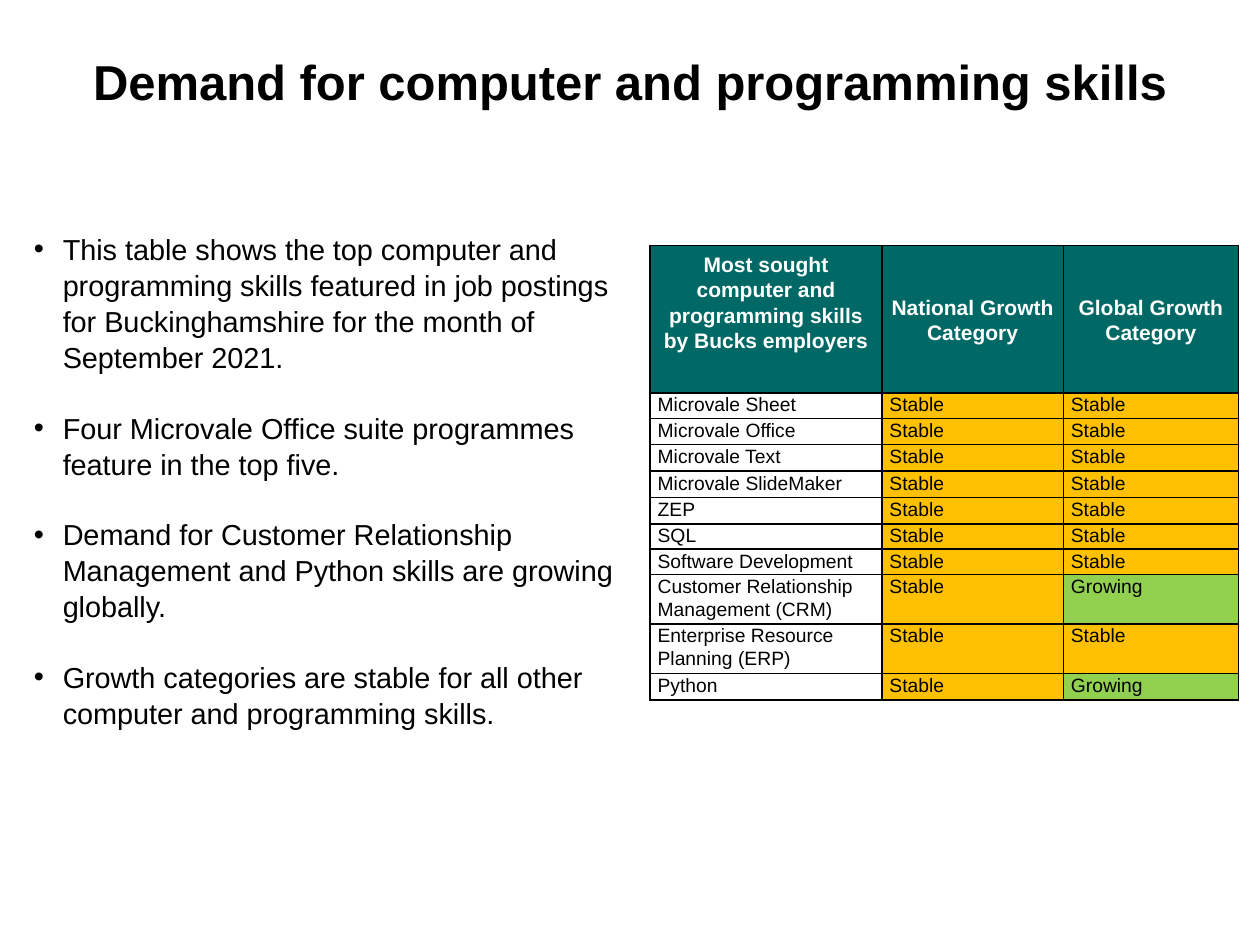
from typing import NamedTuple

from lxml.etree import SubElement
from pptx import Presentation
from pptx.dml.color import RGBColor
from pptx.enum.text import MSO_ANCHOR as Anchor, PP_ALIGN as Align
from pptx.oxml.ns import qn
from pptx.util import Inches, Pt

FONT = "Arial"
BLACK, WHITE, TEAL = "000000", "FFFFFF", "006965"
GROWTH_FILLS = {"Stable": "FFC000", "Growing": "92D050"}


class Skill(NamedTuple):
    name: str
    national: str = "Stable"
    global_: str = "Stable"
    height: float = 0.21


TITLE = "Demand for computer and programming skills"
POINTS = [
    "This table shows the top computer and programming skills featured in job "
    "postings for Buckinghamshire for the month of September 2021.",
    "Four Microvale Office suite programmes feature in the top five.",
    "Demand for Customer Relationship Management and Python skills are growing globally.",
    "Growth categories are stable for all other computer and programming skills.",
]
HEADERS = [
    "Most sought computer and programming skills by Bucks employers",
    "National Growth Category",
    "Global Growth Category",
]
SKILLS = [
    Skill("Microvale Sheet", height=0.2),
    Skill("Microvale Office"),
    Skill("Microvale Text"),
    Skill("Microvale SlideMaker"),
    Skill("ZEP"),
    Skill("SQL", height=0.2),
    Skill("Software Development", height=0.2),
    Skill("Customer Relationship Management (CRM)", global_="Growing", height=0.39),
    Skill("Enterprise Resource Planning (ERP)", height=0.39),
    Skill("Python", global_="Growing"),
]
COLUMN_WIDTHS = [1.84, 1.44, 1.39]
HEADER_HEIGHT = 1.17


def color(hex_code: str) -> RGBColor:
    return RGBColor.from_string(hex_code)


def set_font(paragraph, size: float, hex_code: str = BLACK, bold: bool = False) -> None:
    font = paragraph.font
    font.name, font.size, font.bold = FONT, Pt(size), bold
    font.color.rgb = color(hex_code)


def add_text_frame(slide, left: float, top: float, width: float, height: float):
    box = slide.shapes.add_textbox(Inches(left), Inches(top), Inches(width), Inches(height))
    box.text_frame.word_wrap = True
    return box.text_frame


def add_bullet(paragraph) -> None:
    properties = paragraph._p.get_or_add_pPr()
    properties.set("marL", str(Inches(0.23)))
    properties.set("indent", str(-Inches(0.23)))
    SubElement(properties, qn("a:buFont"), typeface=FONT)
    SubElement(properties, qn("a:buChar"), char="•")


def add_borders(cell) -> None:
    properties = cell._tc.get_or_add_tcPr()
    for position, side in enumerate(("lnL", "lnR", "lnT", "lnB")):
        line = SubElement(properties, qn(f"a:{side}"), w=str(Pt(1)))
        fill = SubElement(line, qn("a:solidFill"))
        SubElement(fill, qn("a:srgbClr"), val=BLACK)
        properties.insert(position, line)


def fill_cell(cell, text: str, fill: str | None, header: bool = False) -> None:
    cell.margin_left = cell.margin_right = Inches(0.06)
    cell.margin_top = cell.margin_bottom = 0
    cell.vertical_anchor = Anchor.MIDDLE if header else Anchor.TOP
    if fill:
        cell.fill.solid()
        cell.fill.fore_color.rgb = color(fill)
    else:
        cell.fill.background()
    add_borders(cell)
    paragraph = cell.text_frame.paragraphs[0]
    paragraph.text = text
    paragraph.line_spacing = 1.07
    paragraph.space_after = Pt(8)
    if header:
        paragraph.alignment = Align.CENTER
        set_font(paragraph, 12, WHITE, bold=True)
    else:
        set_font(paragraph, 11)


def add_title(slide) -> None:
    frame = add_text_frame(slide, 0.5, 0.02, 9, 1.25)
    frame.vertical_anchor = Anchor.MIDDLE
    paragraph = frame.paragraphs[0]
    paragraph.text = TITLE
    paragraph.alignment = Align.CENTER
    set_font(paragraph, 28, bold=True)


def add_points(slide) -> None:
    frame = add_text_frame(slide, 0.17, 1.78, 4.83, 4.27)
    for index, point in enumerate(POINTS):
        paragraph = frame.add_paragraph() if index else frame.paragraphs[0]
        paragraph.text = point
        paragraph.line_spacing = 1.04
        if index:
            paragraph.space_before = Pt(19.8)
        add_bullet(paragraph)
        set_font(paragraph, 16.5)


def add_skills_table(slide) -> None:
    heights = [HEADER_HEIGHT] + [skill.height for skill in SKILLS]
    table = slide.shapes.add_table(
        len(heights), len(HEADERS), Inches(5.16), Inches(1.95),
        Inches(sum(COLUMN_WIDTHS)), Inches(sum(heights)),
    ).table
    for column, width in zip(table.columns, COLUMN_WIDTHS):
        column.width = Inches(width)
    for row, height in zip(table.rows, heights):
        row.height = Inches(height)

    for column, text in enumerate(HEADERS):
        fill_cell(table.cell(0, column), text, TEAL, header=True)
    # The first heading sits above the middle of its row
    table.cell(0, 0).margin_bottom = Inches(0.27)

    for row, skill in enumerate(SKILLS, start=1):
        for column, text in enumerate((skill.name, skill.national, skill.global_)):
            fill_cell(table.cell(row, column), text, GROWTH_FILLS.get(text))


def main() -> None:
    presentation = Presentation()
    presentation.slide_width, presentation.slide_height = Inches(10), Inches(7.5)
    slide = presentation.slides.add_slide(presentation.slide_layouts[6])
    add_title(slide)
    add_points(slide)
    add_skills_table(slide)
    presentation.save("out.pptx")


if __name__ == "__main__":
    main()
